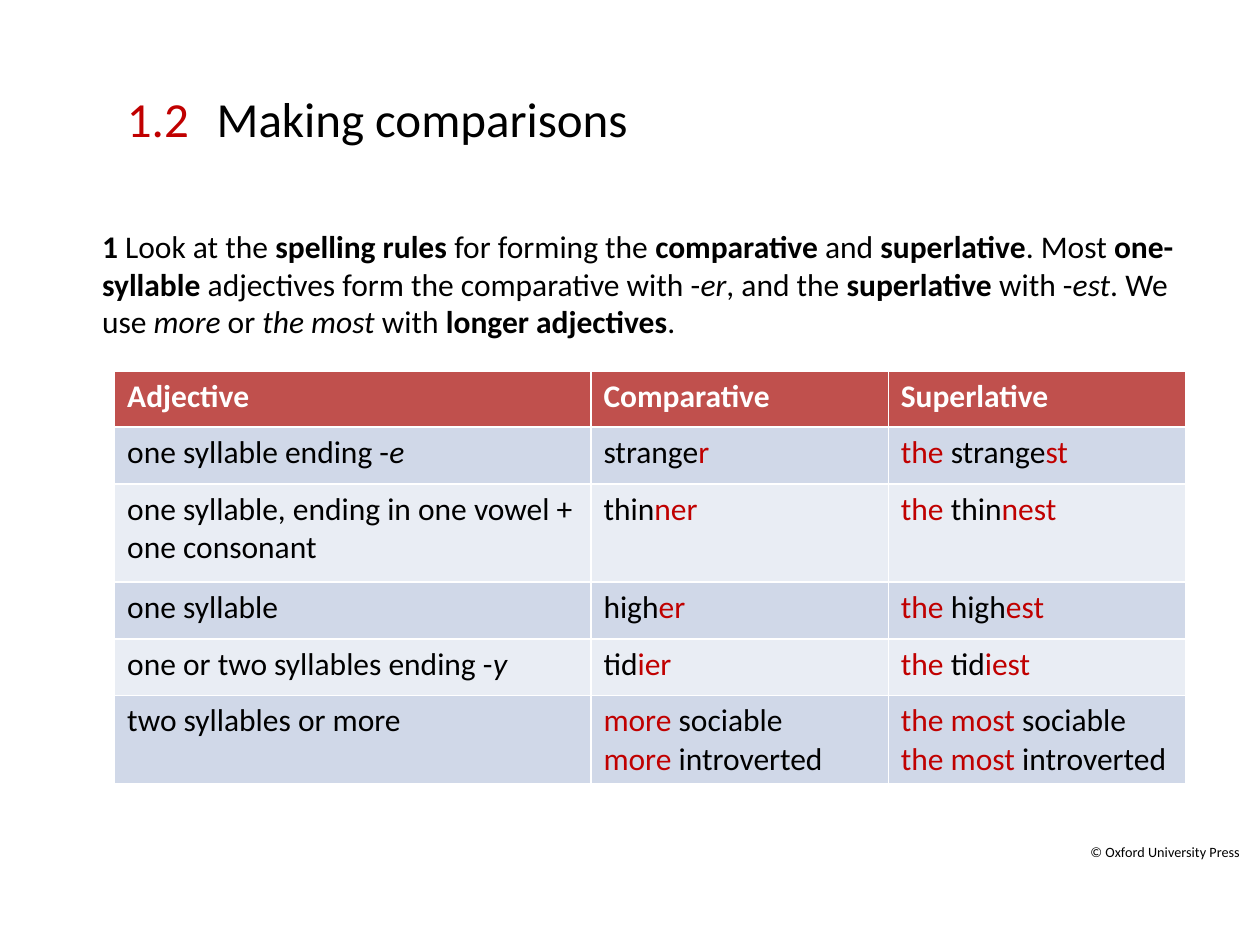
from pptx import Presentation
from pptx.dml.color import RGBColor
from pptx.enum.text import MSO_ANCHOR, MSO_AUTO_SIZE, PP_ALIGN
from pptx.oxml.ns import qn
from pptx.util import Inches, Pt

HEX = {"ink": "000000", "red": "C00000", "white": "FFFFFF",
       "head": "C0504D", "dark": "D0D8E8", "light": "E9EDF4"}

deck = Presentation()
deck.slide_width, deck.slide_height = Inches(10), Inches(7.5)
col, row = deck.slide_width / 100, deck.slide_height / 100
slide = deck.slides.add_slide(deck.slide_layouts[1])


def span(x, y, w, h):
    return int(x * col), int(y * row), int(w * col), int(h * row)


def write(para, runs, size=18):
    for text, style in runs:
        run = para.add_run()
        run.text = text
        font = run.font
        font.name, font.size = "Calibri", Pt(size)
        font.bold, font.italic = "b" in style, "i" in style
        tone = "red" if "r" in style else "white" if "w" in style else "ink"
        font.color.rgb = RGBColor.from_string(HEX[tone])


title = slide.shapes.title
title.left, title.top, title.width, title.height = span(16.2, 4.13, 78.8, 16.67)
title.text_frame.vertical_anchor = MSO_ANCHOR.MIDDLE
title.text_frame.auto_size = MSO_AUTO_SIZE.NONE
para = title.text_frame.paragraphs[0]
para.alignment = PP_ALIGN.LEFT
write(para, [("Making comparisons", "")], 28)

body = slide.placeholders[1]
body.left, body.top, body.width, body.height = span(7.1, 23.33, 87.9, 60.4)
body.text_frame.auto_size = MSO_AUTO_SIZE.NONE
para = body.text_frame.paragraphs[0]
props = para._p.get_or_add_pPr()
props.set("marL", "0")
props.set("indent", "0")
props.append(props.makeelement(qn("a:buNone"), {}))
write(para, [
    ("1", "b"), (" Look at the ", ""), ("spelling rules ", "b"),
    ("for forming the ", ""), ("comparative", "b"), (" and ", ""),
    ("superlative", "b"), (". Most ", ""), ("one-syllable ", "b"),
    ("adjectives form the comparative with -", ""), ("er", "i"),
    (", and the ", ""), ("superlative", "b"), (" with -", ""), ("est", "i"),
    (". We use ", ""), ("more", "i"), (" or ", ""), ("the most ", "i"),
    ("with ", ""), ("longer adjectives", "b"), (".", "")])

labels = [
    ("1.2", "r", 28, PP_ALIGN.LEFT, (9.1, 8.67, 7, 7.6)),
    ("© Oxford University Press", "", 14, PP_ALIGN.RIGHT, (83.6, 88.27, 15.8, 3.47)),
]
for text, style, size, align, place in labels:
    box = slide.shapes.add_textbox(*span(*place))
    box.text_frame.word_wrap = False
    box.text_frame.auto_size = MSO_AUTO_SIZE.SHAPE_TO_FIT_TEXT
    para = box.text_frame.paragraphs[0]
    para.alignment = align
    write(para, [(text, style)], size)
para.runs[0].font._element.set("baseline", "30000")

forms = [
    ([("one syllable ending -", ""), ("e", "i")], "strange", "r", "st"),
    ([("one syllable, ending in one vowel + one consonant", "")], "thin", "ner", "nest"),
    ([("one syllable", "")], "high", "er", "est"),
    ([("one or two syllables ending -", ""), ("y", "i")], "tid", "ier", "iest"),
]
lines = [[[[(name, "bw")]] for name in ("Adjective", "Comparative", "Superlative")]]
for rule, stem, more, most in forms:
    lines.append([[rule], [[(stem, ""), (more, "r")]],
                  [[("the ", "r"), (stem, ""), (most, "r")]]])
words = ("sociable", "introverted")
lines.append([[[("two syllables or more", "")]]] + [
    [[(lead, "r"), (" " + word, "")] for word in words]
    for lead in ("more", "the most")])

grid = slide.shapes.add_table(6, 3, *span(9.1, 39.33, 85, 43.6)).table
for part, width in zip(grid.columns, (37.8, 23.6, 23.6)):
    part.width = int(width * col)
for part, height in zip(grid.rows, (5.87, 6, 10.4, 6, 6, 9.33)):
    part.height = int(height * row)
for r, line in enumerate(lines):
    tone = "head" if r == 0 else "dark" if r % 2 else "light"
    for c, paras in enumerate(line):
        cell = grid.cell(r, c)
        cell.fill.solid()
        cell.fill.fore_color.rgb = RGBColor.from_string(HEX[tone])
        frame = cell.text_frame
        for n, runs in enumerate(paras):
            write(frame.add_paragraph() if n else frame.paragraphs[0], runs)

deck.save("out.pptx")
